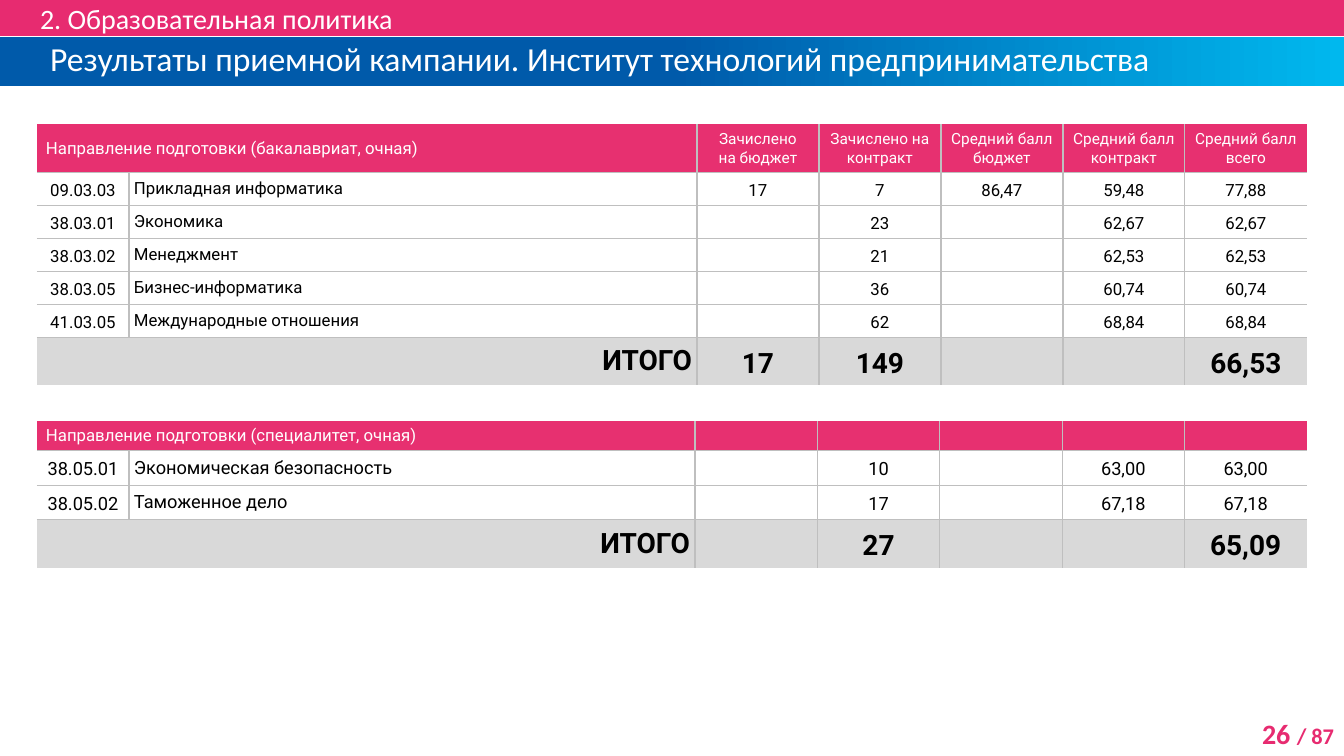
from dataclasses import dataclass

from lxml import etree
from copy import deepcopy
from pptx import Presentation
from pptx import util as u
from pptx.dml.color import RGBColor
from pptx.enum import shapes, text
from pptx.oxml.ns import qn

EMU_PER_PX = 914400 / 100.8


@dataclass(frozen=True)
class Theme:
    """Colours, fonts and type sizes of the slide."""
    pink: str = "E72B70"
    header: str = "E73070"
    blue: str = "005AAA"
    cyan: str = "00B8EE"
    total: str = "D9D9D9"
    border: str = "BFBFBF"
    white: str = "FFFFFF"
    black: str = "000000"
    heading_font: str = "Calibri"
    table_font: str = "Roboto"
    title_size: int = 24
    section_size: int = 20
    page_size: int = 20
    pages_size: int = 16
    total_size: int = 20
    header_size: int = 12
    column_size: int = 11


THEME = Theme()
LEFT, CENTER, RIGHT = text.PP_ALIGN.LEFT, text.PP_ALIGN.CENTER, text.PP_ALIGN.RIGHT

BACHELOR = [
    ["Направление подготовки (бакалавриат, очная)", "", "Зачислено\vна бюджет",
     "Зачислено на контракт", "Средний балл бюджет", "Средний балл контракт",
     "Средний балл всего"],
    ["09.03.03", "Прикладная информатика", "17", "7", "86,47", "59,48", "77,88"],
    ["38.03.01", "Экономика", "", "23", "", "62,67", "62,67"],
    ["38.03.02", "Менеджмент", "", "21", "", "62,53", "62,53"],
    ["38.03.05", "Бизнес-информатика", "", "36", "", "60,74", "60,74"],
    ["41.03.05", "Международные отношения", "", "62", "", "68,84", "68,84"],
    ["ИТОГО", "", "17", "149", "", "", "66,53"],
]
SPECIALIST = [
    ["Направление подготовки (специалитет, очная)", "", "", "", "", "", ""],
    ["38.05.01", "Экономическая безопасность", "", "10", "", "63,00", "63,00"],
    ["38.05.02", "Таможенное дело", "", "17", "", "67,18", "67,18"],
    ["ИТОГО", "", "", "27", "", "", "65,09"],
]


def px(length):
    """Turn pixels into EMU."""
    return u.Emu(round(length * EMU_PER_PX))


def rgb(colour):
    """Turn a hex string into a colour."""
    return RGBColor.from_string(colour)


def style_font(font, name, size, colour, bold=False):
    """Set the typeface, size, colour and weight of a font."""
    font.name, font.size, font.bold = name, u.Pt(size), bold
    font.color.rgb = rgb(colour)


def place(shape, box):
    """Move a shape to a pixel box."""
    shape.left, shape.top, shape.width, shape.height = map(px, box)


def write_band(shape, box, words, indent, size):
    """Place a full-width heading band and write its left-aligned text."""
    place(shape, box)
    frame = shape.text_frame
    frame.text = words
    frame.word_wrap, frame.auto_size = True, text.MSO_AUTO_SIZE.NONE
    frame.vertical_anchor = text.MSO_ANCHOR.MIDDLE
    frame.margin_left = px(indent)
    frame.margin_top = frame.margin_right = frame.margin_bottom = 0
    para = frame.paragraphs[0]
    para.alignment = LEFT
    style_font(para.runs[0].font, THEME.heading_font, size, THEME.white)


def add_section_band(page, box):
    """Draw the pink band naming the section."""
    band = page.shapes.add_shape(shapes.MSO_SHAPE.RECTANGLE, *map(px, box))
    band.shadow.inherit = False
    band.fill.solid()
    band.fill.fore_color.rgb = rgb(THEME.pink)
    band.line.fill.background()
    write_band(band, box, "2. Образовательная политика", 40, THEME.section_size)


def format_title(page, box):
    """Place the title on its blue gradient band."""
    title = page.shapes.title
    write_band(title, box,
               "Результаты приемной кампании. Институт технологий предпринимательства",
               50, THEME.title_size)
    title.text_frame.paragraphs[0].line_spacing = u.Pt(24)
    title.fill.gradient()
    title.fill.gradient_angle = 0
    stop_list = next(title.element.iter(qn("a:gsLst")))
    stop_list.insert(1, deepcopy(stop_list[0]))
    colours = [THEME.blue, THEME.blue, THEME.cyan]
    for stop, position, colour in zip(title.fill.gradient_stops, [0, 0.5, 1], colours):
        stop.position = position
        stop.color.rgb = rgb(colour)


def draw_borders(cell, sides):
    """Draw grey lines on the sides marked true and none on the others."""
    props = cell._tc.get_or_add_tcPr()
    for side, visible in sides.items():
        line = etree.SubElement(props, qn(f"a:ln{side}"), w=str(u.Pt(1)))
        if visible:
            fill = etree.SubElement(line, qn("a:solidFill"))
            etree.SubElement(fill, qn("a:srgbClr"), val=THEME.border)
        else:
            etree.SubElement(line, qn("a:noFill"))


def write_cell(cell, words, size, colour, bold, alignment, spacing):
    """Write one table cell with even margins."""
    cell.text = words
    cell.vertical_anchor = text.MSO_ANCHOR.MIDDLE
    cell.margin_left = cell.margin_right = px(5)
    cell.margin_top = cell.margin_bottom = px(5)
    para = cell.text_frame.paragraphs[0]
    para.alignment, para.line_spacing = alignment, spacing
    for span in para.runs:
        style_font(span.font, THEME.table_font, size, colour, bold)
    if not words:
        etree.SubElement(para._p, qn("a:endParaRPr"), sz=str(size * 100))


def add_results(page, box, rows, heights, name_width, body_size):
    """Build an admission table with a header, programmes and a total."""
    last_row, last_col = len(rows) - 1, len(rows[0]) - 1
    table = page.shapes.add_table(len(rows), len(rows[0]), *map(px, box)).table
    table.first_row = table.horz_banding = False
    code_width = 92
    value_width = (box[2] - code_width - name_width) / 5
    for column, width in zip(table.columns, [code_width, name_width] + [value_width] * 5):
        column.width = px(width)
    for row, height in zip(table.rows, heights):
        row.height = px(height)
    for r, values in enumerate(rows):
        header, total = r == 0, r == last_row
        for c, words in enumerate(values):
            cell = table.cell(r, c)
            size, colour, alignment, spacing = body_size, THEME.black, CENTER, 1.15
            if header:
                size = THEME.column_size if c > 1 else THEME.header_size
                colour, spacing = THEME.white, 1.07
            elif total:
                size = THEME.total_size
            if c == 1 or (c == 0 and (header or total)):
                alignment, spacing = RIGHT if total else LEFT, 1.0
            write_cell(cell, words, size, colour, total, alignment, spacing)
            draw_borders(cell, {"L": c > 0, "R": c < last_col, "T": r > 0, "B": r < last_row})
            if header or total:
                cell.fill.solid()
                cell.fill.fore_color.rgb = rgb(THEME.header if header else THEME.total)
            else:
                cell.fill.background()
        if header or total:
            table.cell(r, 0).merge(table.cell(r, 1))
    table.cell(0, 0).margin_left = px(9)


def add_page_number(page, box):
    """Write the page number and the page count."""
    frame = page.shapes.add_textbox(*map(px, box)).text_frame
    frame.word_wrap = True
    para = frame.paragraphs[0]
    para.alignment = RIGHT
    for words, size in [("26 ", THEME.page_size), ("/ 87", THEME.pages_size)]:
        span = para.add_run()
        span.text = words
        style_font(span.font, THEME.heading_font, size, THEME.pink, True)


def main():
    """Build and save the deck."""
    deck = Presentation()
    deck.slide_width, deck.slide_height = px(1344), px(756)
    page = deck.slides.add_slide(deck.slide_layouts[5])
    add_section_band(page, (0, 0, 1344, 36))
    format_title(page, (0, 37, 1344, 49))
    add_results(page, (37, 124, 1270, 260), BACHELOR, [48] + [33] * 5 + [47], 568, 12)
    add_results(page, (37, 421, 1270, 146), SPECIALIST, [29, 35, 34, 48], 566, 13)
    add_page_number(page, (1223, 712, 121, 44))
    deck.save("out.pptx")


if __name__ == "__main__":
    main()
